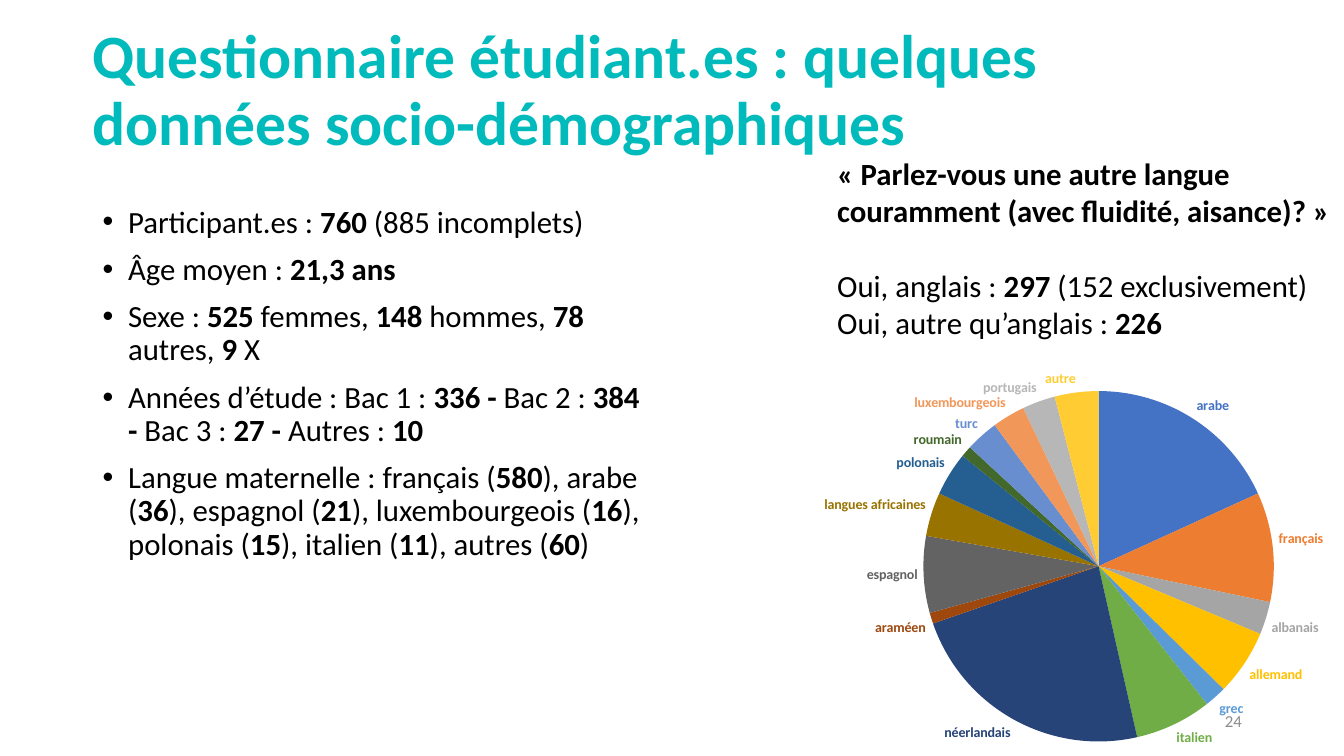
import pptx
import pptx.util
import pptx.chart.data
import pptx.dml.color
import pptx.enum.chart
import pptx.enum.text
import pptx.oxml
import pptx.oxml.ns

Cm = pptx.util.Cm
Pt = pptx.util.Pt
ALIGN = pptx.enum.text.PP_ALIGN
ANCHOR = pptx.enum.text.MSO_ANCHOR

FONT = "Calibri"
COLORS = {"title": "00BABC", "text": "000000", "number": "8C8C8C"}

FACTS = [
    "Participant.es : **760** (885 incomplets)",
    "Âge moyen : **21,3 ans**",
    "Sexe : **525** femmes, **148** hommes, **78 **autres, **9** X",
    "Années d’étude : Bac 1 : **336 - **Bac 2 : **384 - **Bac 3 : **27 - **Autres : **10**",
    "Langue maternelle : français (**580**), arabe (**36**), espagnol (**21**), "
    "luxembourgeois (**16**), polonais (**15**), italien (**11**), autres (**60**)",
]
QUESTION = "**« Parlez-vous une autre langue couramment (avec fluidité, aisance)? »**"
ANSWERS = ["Oui, anglais : **297 **(152 exclusivement)", "Oui, autre qu’anglais : **226**"]

# Language, share, slice colour
SLICES = [
    ("arabe", 18, "4472C4"), ("français", 10, "ED7D31"),
    ("albanais", 3, "A5A5A5"), ("allemand", 6, "FFC000"),
    ("grec", 2, "5B9BD5"), ("italien", 7, "70AD47"),
    ("néerlandais", 23, "264478"), ("araméen", 1, "9E480E"),
    ("espagnol", 7, "636363"), ("langues africaines", 4, "997300"),
    ("polonais", 4, "255E91"), ("roumain", 1, "43682B"),
    ("turc", 3, "698ED0"), ("luxembourgeois", 3, "F1975A"),
    ("portugais", 3, "B7B7B7"), ("autre", 4, "FFCD33"),
]


def rgb(value):
    return pptx.dml.color.RGBColor.from_string(value)


def write(par, text, size=22, color="text", align=ALIGN.LEFT, line=1.0, before=0, bullet=False):
    """Fill a paragraph; text between ** marks is bold."""
    par.alignment = align
    par.line_spacing = line
    par.space_before = Pt(before)
    for i, part in enumerate(text.split("**")):
        if part:
            run = par.add_run()
            run.text = part
            font = run.font
            font.name, font.size, font.bold = FONT, Pt(size), i % 2 == 1
            font.color.rgb = rgb(COLORS[color])
    if bullet:
        props = par._p.get_or_add_pPr()
        props.set("marL", str(Cm(0.64)))
        props.set("indent", str(-Cm(0.64)))
        ns = pptx.oxml.ns.nsdecls("a")
        props.append(pptx.oxml.parse_xml(f'<a:buFont {ns} typeface="Arial"/>'))
        props.append(pptx.oxml.parse_xml(f'<a:buChar {ns} char="•"/>'))


def add_box(slide, box, anchor=ANCHOR.TOP):
    frame = slide.shapes.add_textbox(*map(Cm, box)).text_frame
    frame.word_wrap = True
    frame.vertical_anchor = anchor
    return frame


def next_par(frame, i):
    return frame.add_paragraph() if i else frame.paragraphs[0]


def add_title(slide, box):
    title = slide.shapes.title
    title.left, title.top, title.width, title.height = map(Cm, box)
    frame = title.text_frame
    frame.auto_size = pptx.enum.text.MSO_AUTO_SIZE.NONE
    frame.vertical_anchor = ANCHOR.MIDDLE
    write(frame.paragraphs[0],
          "**Questionnaire étudiant.es : quelques données socio-démographiques**",
          size=44, color="title", line=0.9)


def add_facts(slide, box):
    frame = add_box(slide, box)
    for i, fact in enumerate(FACTS):
        write(next_par(frame, i), fact, line=0.9, before=10, bullet=True)


def add_number(slide, box):
    frame = add_box(slide, box, ANCHOR.MIDDLE)
    write(frame.paragraphs[0], "24", size=12, color="number", align=ALIGN.RIGHT)


def add_question(slide, box):
    frame = add_box(slide, box)
    for i, text in enumerate([QUESTION] + ANSWERS):
        write(next_par(frame, i), text, before=27 if i == 1 else 0)


def add_pie(slide, box):
    data = pptx.chart.data.CategoryChartData()
    data.categories = [name for name, _, _ in SLICES]
    data.add_series("Langues", [share for _, share, _ in SLICES])
    kind = pptx.enum.chart.XL_CHART_TYPE.PIE
    chart = slide.shapes.add_chart(kind, *map(Cm, box), data).chart
    chart.has_title = chart.has_legend = False
    chart.font.name, chart.font.size = FONT, Pt(10)
    chart.font.color.rgb = rgb(COLORS["text"])

    # Slices, each with a label in its own colour
    for i, (_, _, color) in enumerate(SLICES):
        point = chart.plots[0].series[0].points[i]
        point.format.fill.solid()
        point.format.fill.fore_color.rgb = rgb(color)
        label = point.data_label
        label.position = pptx.enum.chart.XL_LABEL_POSITION.OUTSIDE_END
        font = label.font
        font.name, font.size, font.bold = FONT, Pt(10), True
        font.color.rgb = rgb(color)

    # Labels show the language only
    root = chart._chartSpace
    for tag, value in (("showVal", "0"), ("showCatName", "1"), ("showPercent", "0")):
        for node in root.xpath(f"//c:dLbl/c:{tag}"):
            node.set("val", value)

    # Place of the pie in its frame
    area = root.xpath("//c:plotArea")[0]
    for old in area.xpath("c:layout"):
        area.remove(old)
    rules = [("layoutTarget", "inner"), ("xMode", "edge"), ("yMode", "edge"),
             ("x", 0.29), ("y", 0.09), ("w", 0.5), ("h", 0.85)]
    inner = "".join(f'<c:{tag} val="{value}"/>' for tag, value in rules)
    ns = pptx.oxml.ns.nsdecls("c")
    area.insert(0, pptx.oxml.parse_xml(
        f"<c:layout {ns}><c:manualLayout>{inner}</c:manualLayout></c:layout>"))


def main():
    deck = pptx.Presentation()
    deck.slide_width, deck.slide_height = Cm(33.87), Cm(19.05)
    slide = deck.slides.add_slide(deck.slide_layouts[5])
    add_title(slide, (2.08, 0.48, 29.21, 3.68))
    add_facts(slide, (2.34, 5.08, 14.35, 13.97))
    add_number(slide, (23.93, 17.65, 7.62, 1.02))
    add_question(slide, (20.85, 3.78, 13.03, 5.74))
    add_pie(slide, (18.14, 8.92, 17.68, 10.39))
    deck.save("out.pptx")


if __name__ == "__main__":
    main()
